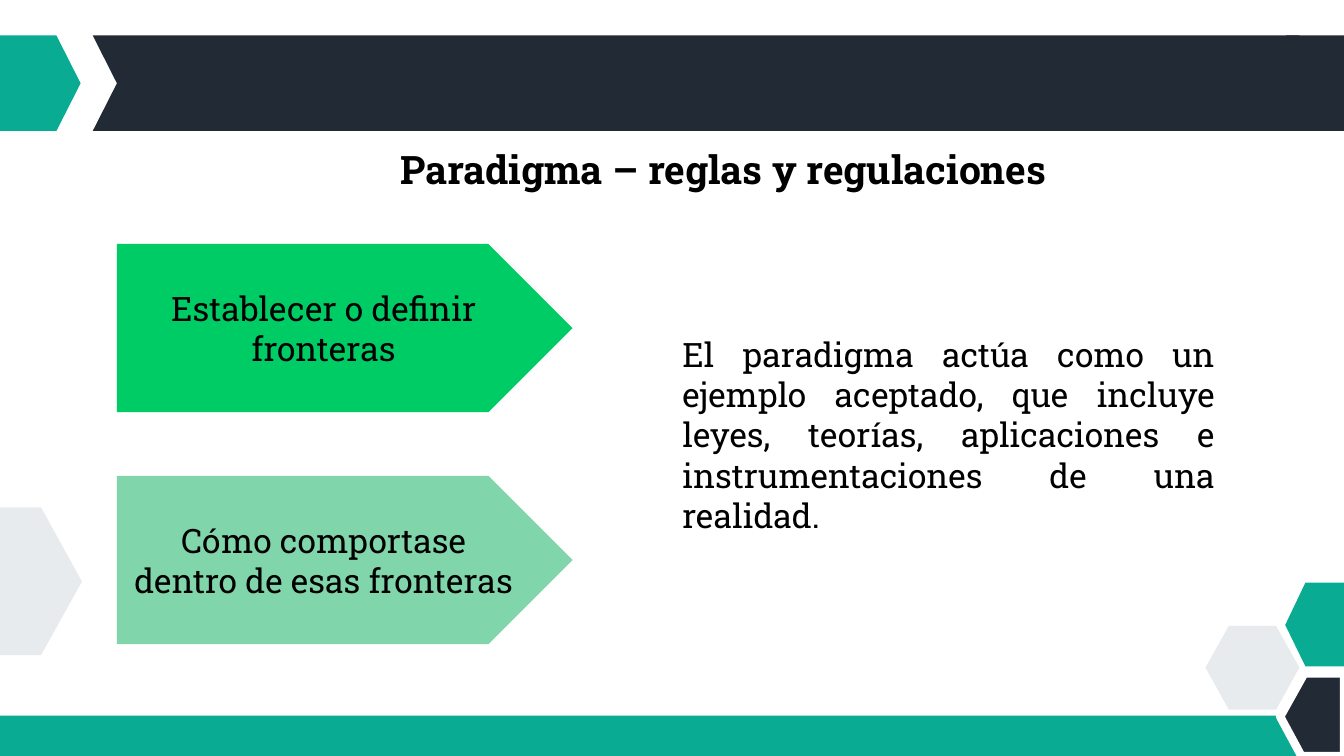
import pptx
import pptx.dml.color
import pptx.enum.shapes
import pptx.enum.text
import pptx.oxml
import pptx.oxml.ns
import pptx.util

WIDTH = pptx.util.Inches(13.333)
HEIGHT = pptx.util.Inches(7.5)
FONT = "Roboto Slab"
COLOURS = {
    "teal": "09AB93",
    "navy": "222A35",
    "grey": "D9DEE2",
    "green": "00CC66",
    "mint": "81D5AB",
    "black": "000000",
    "white": "FFFFFF",
}
SHAPES = pptx.enum.shapes.MSO_SHAPE
ALIGN = pptx.enum.text.PP_ALIGN

# All lengths are percentages of the slide's width (across) and height (down).
HEADER_TOP, HEADER_MIDDLE, HEADER_BOTTOM = 4.7, 11.03, 17.33
ARROW_LEFT, ARROW_TOP, ARROW_WIDTH, ARROW_HEIGHT = 8.7, 32.27, 33.9, 22.27
ARROW_STEP = 30.67
ARROWS = [
    ("Establecer o definir fronteras", "green"),
    ("Cómo comportase dentro de esas fronteras", "mint"),
]
HEADER_PIECES = [
    ("teal", [(0, HEADER_TOP), (4.2, HEADER_TOP), (6, HEADER_MIDDLE),
              (4.2, HEADER_BOTTOM), (0, HEADER_BOTTOM)]),
    ("navy", [(6.9, HEADER_TOP), (96.68, HEADER_TOP), (96.68, HEADER_BOTTOM),
              (6.9, HEADER_BOTTOM), (8.7, HEADER_MIDDLE)]),
    ("navy", [(100, HEADER_TOP), (95.7, HEADER_TOP), (93.9, HEADER_MIDDLE),
              (95.7, HEADER_BOTTOM), (100, HEADER_BOTTOM)]),
]
GREY_HEXAGON = [(89.7, 88.3), (91.43, 82.8), (94.95, 82.8),
                (96.68, 88.3), (94.95, 93.87), (91.43, 93.87)]
TEAL_HEXAGON = [(97.13, 77.07), (100, 77.07), (100, 88.13),
                (97.13, 88.13), (95.63, 82.67)]
NAVY_HEXAGON = [(100, 89.07), (100, 100), (96.83, 100),
                (95.25, 94.8), (97.05, 89.07)]
LEFT_HEXAGON = [(0, 67.1), (3.05, 67.1), (6.1, 76.93),
                (3.05, 86.67), (0, 86.67)]


def across(share):
    return round(WIDTH * share / 100)


def down(share):
    return round(HEIGHT * share / 100)


def frame(left, top, width, height):
    return across(left), down(top), across(width), down(height)


def rgb(name):
    return pptx.dml.color.RGBColor.from_string(COLOURS[name])


def paint(shape, colour, opacity=100):
    """Give a shape a flat fill without line or shadow."""
    shape.shadow.inherit = False
    shape.fill.solid()
    shape.fill.fore_color.rgb = rgb(colour)
    shape.line.fill.background()
    if opacity < 100:
        colour_node = shape.fill._xPr.find(".//" + pptx.oxml.ns.qn("a:srgbClr"))
        alpha = pptx.oxml.parse_xml(
            f'<a:alpha {pptx.oxml.ns.nsdecls("a")} val="{opacity * 1000}"/>')
        colour_node.append(alpha)
    return shape


def add_outline(page, points, colour, opacity=100):
    corners = [(across(x), down(y)) for x, y in points]
    builder = page.shapes.build_freeform(*corners[0])
    builder.add_line_segments(corners[1:], close=True)
    return paint(builder.convert_to_shape(), colour, opacity)


def write(shape, text, size, align, bold=False):
    para = shape.text_frame.paragraphs[0]
    para.text = text
    para.alignment = align
    font = para.runs[0].font
    font.name = FONT
    font.size = pptx.util.Pt(size)
    font.bold = bold
    font.color.rgb = rgb("black")


def add_text(page, place, text, size, align, bold=False, wrap=True):
    box = page.shapes.add_textbox(*frame(*place))
    box.text_frame.word_wrap = wrap
    box.text_frame.auto_size = pptx.enum.text.MSO_AUTO_SIZE.SHAPE_TO_FIT_TEXT
    write(box, text, size, align, bold)


def add_arrow(page, row, text, colour):
    place = (ARROW_LEFT, ARROW_TOP + row * ARROW_STEP, ARROW_WIDTH, ARROW_HEIGHT)
    arrow = page.shapes.add_shape(SHAPES.PENTAGON, *frame(*place))
    paint(arrow, colour)
    arrow.text_frame.word_wrap = True
    arrow.text_frame.vertical_anchor = pptx.enum.text.MSO_ANCHOR.MIDDLE
    write(arrow, text, 24, ALIGN.CENTER)


def add_decoration(page):
    add_outline(page, GREY_HEXAGON, "grey", opacity=60)
    add_outline(page, TEAL_HEXAGON, "teal")
    footer = page.shapes.add_shape(SHAPES.RECTANGLE, *frame(0, 94.67, 100, 5.33))
    paint(footer, "teal")
    corner = add_outline(page, NAVY_HEXAGON, "navy")
    corner.line.color.rgb = rgb("white")
    corner.line.width = pptx.util.Pt(6)
    for colour, points in HEADER_PIECES:
        add_outline(page, points, colour)
    add_outline(page, LEFT_HEXAGON, "grey", opacity=60)


def main():
    deck = pptx.Presentation()
    deck.slide_width, deck.slide_height = WIDTH, HEIGHT
    page = deck.slides.add_slide(deck.slide_layouts[6])
    add_decoration(page)
    add_text(page, (50.03, 43.47, 41.1, 28.27),
             "El paradigma actúa como un ejemplo aceptado, que incluye leyes, "
             "teorías, aplicaciones e instrumentaciones de una realidad.",
             24, ALIGN.JUSTIFY)
    add_text(page, (29.03, 18.53, 53.1, 7.6), "Paradigma – reglas y regulaciones",
             28, ALIGN.LEFT, bold=True, wrap=False)
    for row, (text, colour) in enumerate(ARROWS):
        add_arrow(page, row, text, colour)
    deck.save("out.pptx")


if __name__ == "__main__":
    main()
